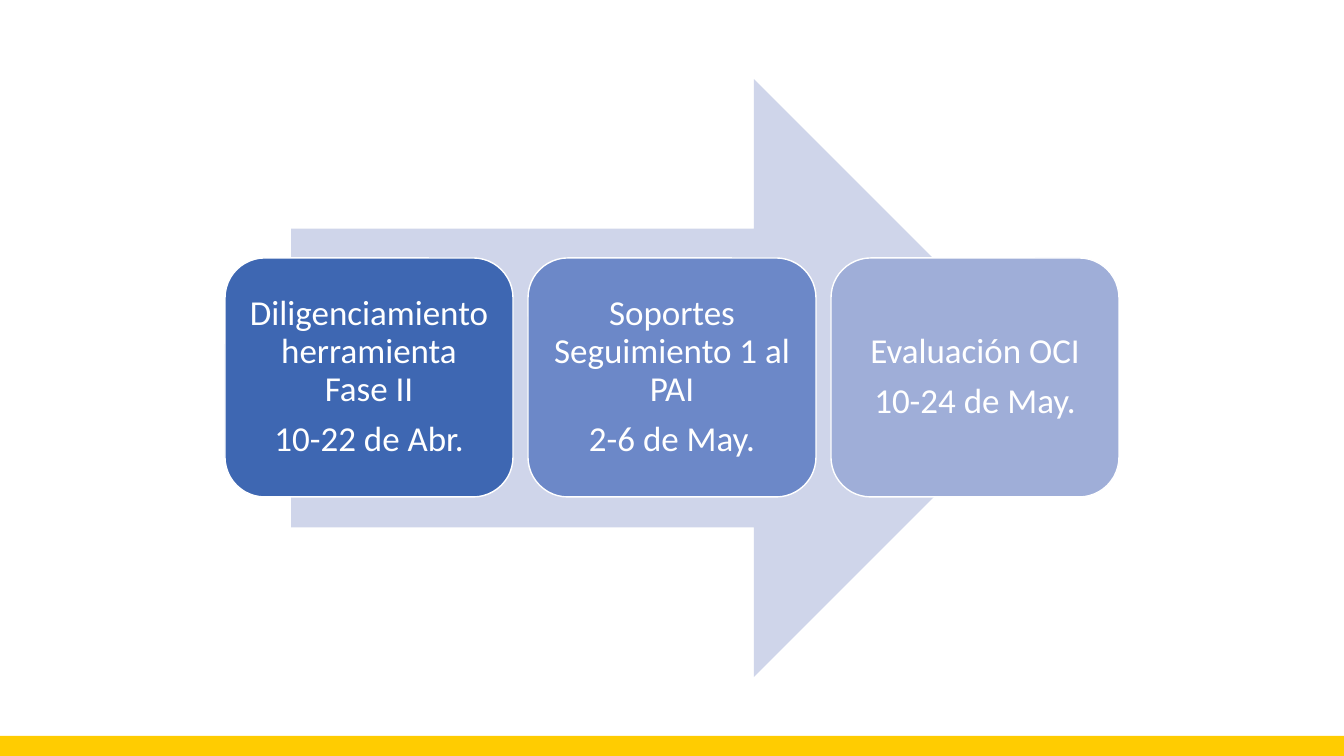
from pptx import Presentation
from pptx.dml.color import RGBColor
from pptx.enum.shapes import MSO_SHAPE
from pptx.enum.text import MSO_ANCHOR, PP_ALIGN
from pptx.util import Emu, Pt

PX_PER_INCH = 100.8
COLORS = {
    "footer": "FFCC01",
    "arrow": "CFD5EA",
    "white": "FFFFFF",
    "tool": "3E67B2",
    "support": "6C88C8",
    "evaluation": "9FAED8",
}
STEPS = [
    ("tool", "Diligenciamiento herramienta Fase II", "10-22 de Abr."),
    ("support", "Soportes Seguimiento 1 al PAI", "2-6 de May."),
    ("evaluation", "Evaluación OCI", "10-24 de May."),
]
CARD_LEFT, CARD_TOP, CARD_WIDTH, CARD_HEIGHT = 225, 258, 288, 239
CARD_PITCH = 303


def px(length):
    return Emu(round(length * 914400 / PX_PER_INCH))


def color(name):
    return RGBColor.from_string(COLORS[name])


def add_block(page, kind, left, top, width, height, fill, line=None):
    block = page.shapes.add_shape(kind, px(left), px(top), px(width), px(height))
    block.shadow.inherit = False
    block.fill.solid()
    block.fill.fore_color.rgb = color(fill)
    if line:
        block.line.color.rgb = color(line)
        block.line.width = Pt(1)
    else:
        block.line.fill.background()
    return block


def write_text(box, lines, size=25, font="Calibri", ink="white", margin=10):
    frame = box.text_frame
    frame.word_wrap = True
    frame.vertical_anchor = MSO_ANCHOR.MIDDLE
    frame.margin_left = frame.margin_right = px(margin)
    frame.margin_top = frame.margin_bottom = px(margin)
    for index, line in enumerate(lines):
        para = frame.add_paragraph() if index else frame.paragraphs[0]
        para.alignment = PP_ALIGN.CENTER
        para.line_spacing = 0.9
        para.space_after = Pt(0.35 * size)
        span = para.add_run()
        span.text = line
        span.font.name = font
        span.font.size = Pt(size)
        span.font.color.rgb = color(ink)


def add_step(page, index, fill, title, dates):
    card = add_block(page, MSO_SHAPE.ROUNDED_RECTANGLE,
                     CARD_LEFT + index * CARD_PITCH, CARD_TOP,
                     CARD_WIDTH, CARD_HEIGHT, fill, line="white")
    write_text(card, [title, dates])


def main():
    deck = Presentation()
    deck.slide_width, deck.slide_height = px(1344), px(756)
    page = deck.slides.add_slide(deck.slide_layouts[6])

    # Footer band and process arrow
    add_block(page, MSO_SHAPE.RECTANGLE, 0, 736, 1344, 20, "footer")
    add_block(page, MSO_SHAPE.RIGHT_ARROW, 291, 79, 762, 598, "arrow")

    # Step cards
    for index, step in enumerate(STEPS):
        add_step(page, index, *step)

    deck.save("out.pptx")


if __name__ == "__main__":
    main()
